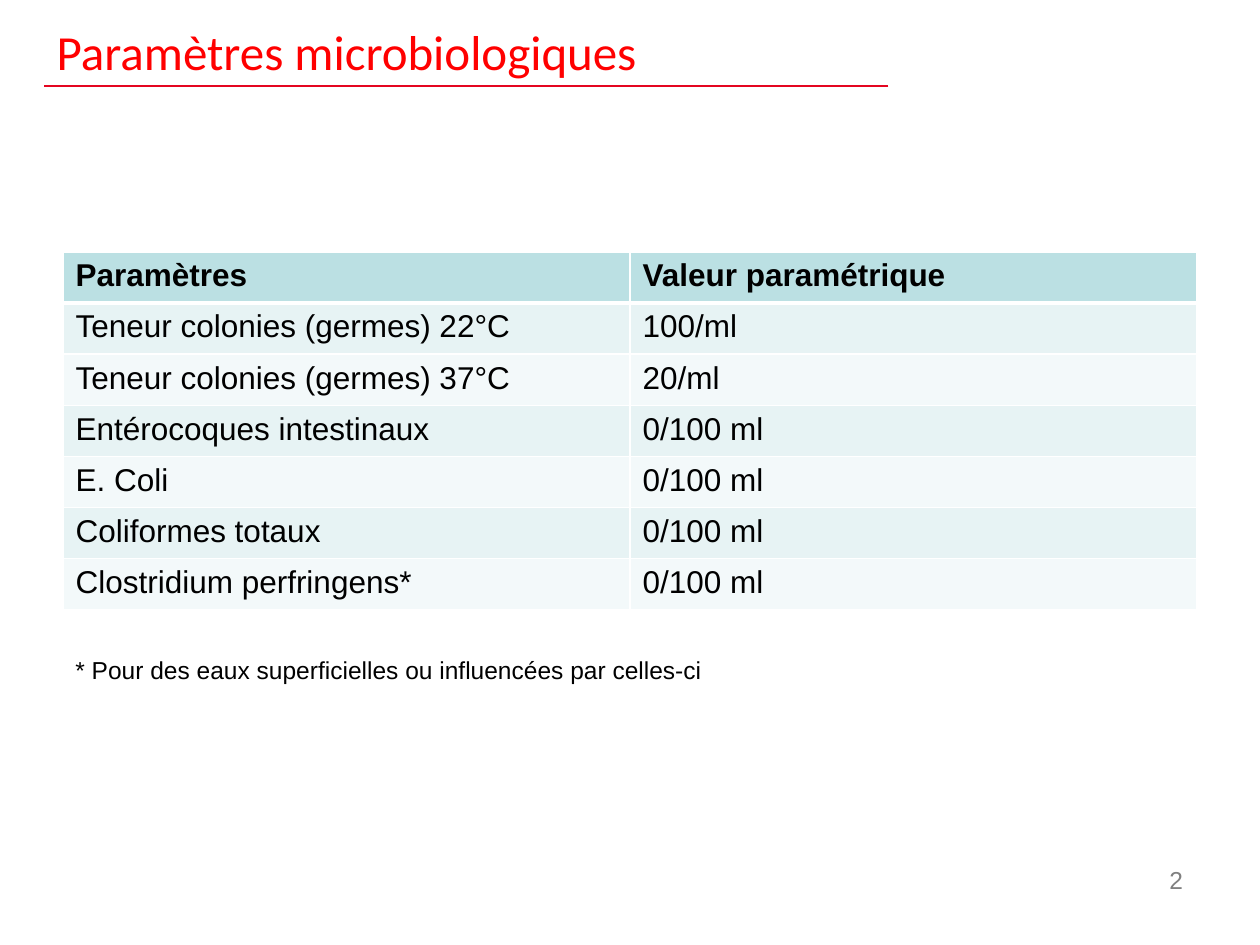
"""Build the slide on microbiological parameters of drinking water."""
from lxml import etree
from pptx import Presentation
from pptx import util as u
from pptx.dml.color import RGBColor
from pptx.enum import shapes, text
from pptx.oxml import ns

TITLE = "Paramètres microbiologiques"
ROWS = [
    ("Paramètres", "Valeur paramétrique"),
    ("Teneur colonies (germes) 22°C", "100/ml"),
    ("Teneur colonies (germes) 37°C", "20/ml"),
    ("Entérocoques intestinaux", "0/100 ml"),
    ("E. Coli", "0/100 ml"),
    ("Coliformes totaux", "0/100 ml"),
    ("Clostridium perfringens*", "0/100 ml"),
]
FOOTNOTE = "* Pour des eaux superficielles ou influencées par celles-ci"
PAGE = "2"

RED = RGBColor(0xFF, 0x00, 0x00)
RULE_RED = RGBColor(0xE4, 0x05, 0x20)
BLACK = RGBColor(0x00, 0x00, 0x00)
GREY = RGBColor(0x80, 0x80, 0x80)
WHITE = RGBColor(0xFF, 0xFF, 0xFF)
HEADER = RGBColor(0xBB, 0xE0, 0xE3)
BANDS = (RGBColor(0xF3, 0xF9, 0xFA), RGBColor(0xE7, 0xF3, 0xF4))

LEFT, WIDTH, ROW_HEIGHT = 1.27, 22.86, 1.03


def write(frame, words, font="Arial", size=18, color=BLACK, bold=False,
          align=text.PP_ALIGN.LEFT, anchor=None):
    """Put formatted words in a text frame."""
    frame.word_wrap = True
    if anchor is not None:
        frame.vertical_anchor = anchor
    paragraph = frame.paragraphs[0]
    paragraph.alignment = align
    run = paragraph.add_run()
    run.text = words
    run.font.name, run.font.size, run.font.bold = font, u.Pt(size), bold
    run.font.color.rgb = color


def add_borders(cell, **widths):
    """Draw white cell borders, one width in points per side."""
    properties = cell._tc.get_or_add_tcPr()
    for side, width in widths.items():
        border = etree.SubElement(properties, ns.qn(f"a:ln{side}"), w=str(u.Pt(width)))
        fill = etree.SubElement(border, ns.qn("a:solidFill"))
        etree.SubElement(fill, ns.qn("a:srgbClr"), val=str(WHITE))


def add_title(slide):
    """Set the title and the red rule under it."""
    rule = slide.shapes.add_connector(
        shapes.MSO_CONNECTOR.STRAIGHT, u.Cm(17.91), u.Cm(1.73), u.Cm(0.89), u.Cm(1.73))
    rule.line.color.rgb, rule.line.width = RULE_RED, u.Pt(1.5)
    etree.SubElement(rule._element.spPr, ns.qn("a:effectLst"))
    title = slide.shapes.title
    title.left, title.top = u.Cm(0.89), u.Cm(0.33)
    title.width, title.height = u.Cm(17.2), u.Cm(1.4)
    write(title.text_frame, TITLE, font="Calibri", size=28, color=RED,
          anchor=text.MSO_ANCHOR.MIDDLE)


def add_parameters(slide):
    """Add the banded table of limits."""
    limits = slide.shapes.add_table(
        len(ROWS), len(ROWS[0]), u.Cm(LEFT), u.Cm(5.08),
        u.Cm(WIDTH), u.Cm(ROW_HEIGHT * len(ROWS))).table
    for r, row in enumerate(ROWS):
        limits.rows[r].height = u.Cm(ROW_HEIGHT)
        for c, words in enumerate(row):
            cell = limits.cell(r, c)
            add_borders(cell, L=1, R=1, T=3 if r == 1 else 1, B=3 if r == 0 else 1)
            cell.fill.solid()
            cell.fill.fore_color.rgb = BANDS[r % 2] if r else HEADER
            write(cell.text_frame, words, bold=r == 0)


def add_note(slide, words, left, top, width, height, **style):
    """Add a small text box."""
    box = slide.shapes.add_textbox(u.Cm(left), u.Cm(top), u.Cm(width), u.Cm(height))
    write(box.text_frame, words, size=14, **style)


def main():
    """Assemble and save the slide."""
    deck = Presentation()
    deck.slide_width, deck.slide_height = u.Cm(25.4), u.Cm(19.05)
    slide = deck.slides.add_slide(deck.slide_layouts[5])
    add_title(slide)
    add_parameters(slide)
    add_note(slide, PAGE, 22.3, 17.32, 1.8, 1.4, color=GREY, align=text.PP_ALIGN.RIGHT)
    add_note(slide, FOOTNOTE, LEFT, 13.08, WIDTH, 0.86)
    deck.save("out.pptx")


if __name__ == "__main__":
    main()
